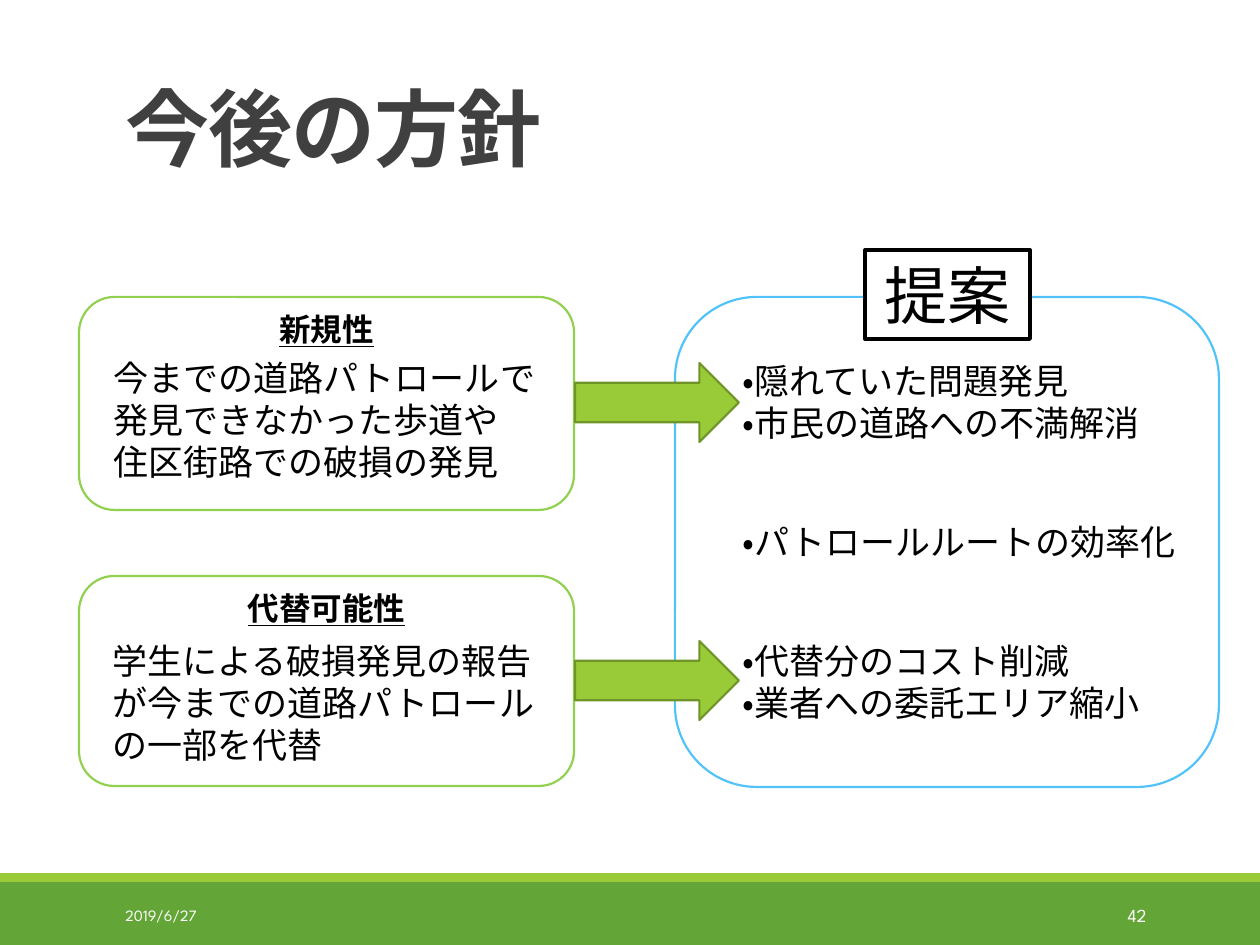
from pptx import Presentation
from pptx.dml.color import RGBColor
from pptx.enum.lang import MSO_LANGUAGE_ID
from pptx.enum.shapes import MSO_SHAPE
from pptx.enum.text import MSO_ANCHOR, PP_ALIGN
from pptx.util import Pt

JAPANESE = MSO_LANGUAGE_ID.JAPANESE
RECTANGLE = MSO_SHAPE.RECTANGLE
ROUNDED = MSO_SHAPE.ROUNDED_RECTANGLE
PROCESS = MSO_SHAPE.FLOWCHART_ALTERNATE_PROCESS
ARROW = MSO_SHAPE.RIGHT_ARROW
TOP, MIDDLE, BOTTOM = MSO_ANCHOR.TOP, MSO_ANCHOR.MIDDLE, MSO_ANCHOR.BOTTOM
LEFT, CENTER, RIGHT = PP_ALIGN.LEFT, PP_ALIGN.CENTER, PP_ALIGN.RIGHT

SCALE = 914400 / 126
COLORS = {
    "white": "FFFFFF", "black": "000000", "title": "404040",
    "footer": "63A537", "lime": "99CB38", "arrow_line": "6F9428",
    "card_line": "92D050", "proposal_line": "51C3F9",
}
BODY_FONT = "League Spartan"
TITLE_FONT = "Noto Sans CJK JP"

deck = Presentation()
deck.slide_width = round(1260 * SCALE)
deck.slide_height = round(945 * SCALE)
page = deck.slides.add_slide(deck.slide_layouts[5])


def add_box(kind, place, fill=None, line=None, width=1.25):
    emu = [round(length * SCALE) for length in place]
    if kind is None:
        return page.shapes.add_textbox(*emu)
    box = page.shapes.add_shape(kind, *emu)
    box.shadow.inherit = False
    box.fill.solid()
    box.fill.fore_color.rgb = RGBColor.from_string(COLORS[fill])
    if line:
        box.line.color.rgb = RGBColor.from_string(COLORS[line])
        box.line.width = Pt(width)
    else:
        box.line.fill.background()
    return box


def write(box, text, size, color="black", align=LEFT, anchor=TOP,
          bold=False, underline=False, font=BODY_FONT):
    frame = box.text_frame
    frame.text = text
    frame.word_wrap = True
    frame.vertical_anchor = anchor
    for para in frame.paragraphs:
        para.alignment = align
        for span in para.runs:
            span.font.name = font
            span.font.size = Pt(size)
            span.font.bold = bold
            span.font.underline = underline
            span.font.language_id = JAPANESE
            span.font.color.rgb = RGBColor.from_string(COLORS[color])


add_box(RECTANGLE, (0, 882, 1260, 63), "footer")
add_box(RECTANGLE, (0, 873, 1260, 9), "lime")

title = page.shapes.title
title.left, title.top, title.width, title.height = [
    round(length * SCALE) for length in (113, 39, 1040, 145)]
write(title, "今後の方針", 48, "title", anchor=BOTTOM, bold=True, font=TITLE_FONT)
heading = title.text_frame.paragraphs[0]
heading.line_spacing = 0.85
heading.runs[0].font._element.set("spc", "-50")

cards = [
    ("新規性", (79, 297, 495, 213), (101, 350, 496, 140),
     "今までの道路パトロールで\n発見できなかった歩道や\n住区街路での破損の発見"),
    ("代替可能性", (79, 576, 495, 210), (100, 633, 455, 140),
     "学生による破損発見の報告が今までの道路パトロールの一部を代替"),
]
for name, card_place, text_place, text in cards:
    card = add_box(PROCESS, card_place, "white", "card_line")
    write(card, name, 18, align=CENTER, bold=True, underline=True)
    card.text_frame.margin_top = round(3 * SCALE)
    write(add_box(None, text_place), text, 20)

proposal = add_box(ROUNDED, (675, 297, 544, 490), "white", "proposal_line")
proposal.adjustments[0] = 0.167

for top in (363, 641):
    add_box(ARROW, (575, top, 164, 79), "lime", "arrow_line")

benefits = [
    (353, 97, "・隠れていた問題発見\n・市民の道路への不満解消"),
    (514, 55, "・パトロールルートの効率化"),
    (633, 97, "・代替分のコスト削減\n・業者への委託エリア縮小"),
]
for top, height, text in benefits:
    write(add_box(None, (730, top, 490, height)), text, 20)

label = add_box(RECTANGLE, (865, 250, 165, 89), "white", "black", 2.25)
write(label, "提案", 36, align=CENTER)

write(add_box(None, (113, 890, 256, 50)), "2019/6/27", 9, "white", anchor=MIDDLE)
write(add_box(None, (1023, 890, 136, 50)), "42", 10.5, "white", RIGHT, MIDDLE)

deck.save("out.pptx")
